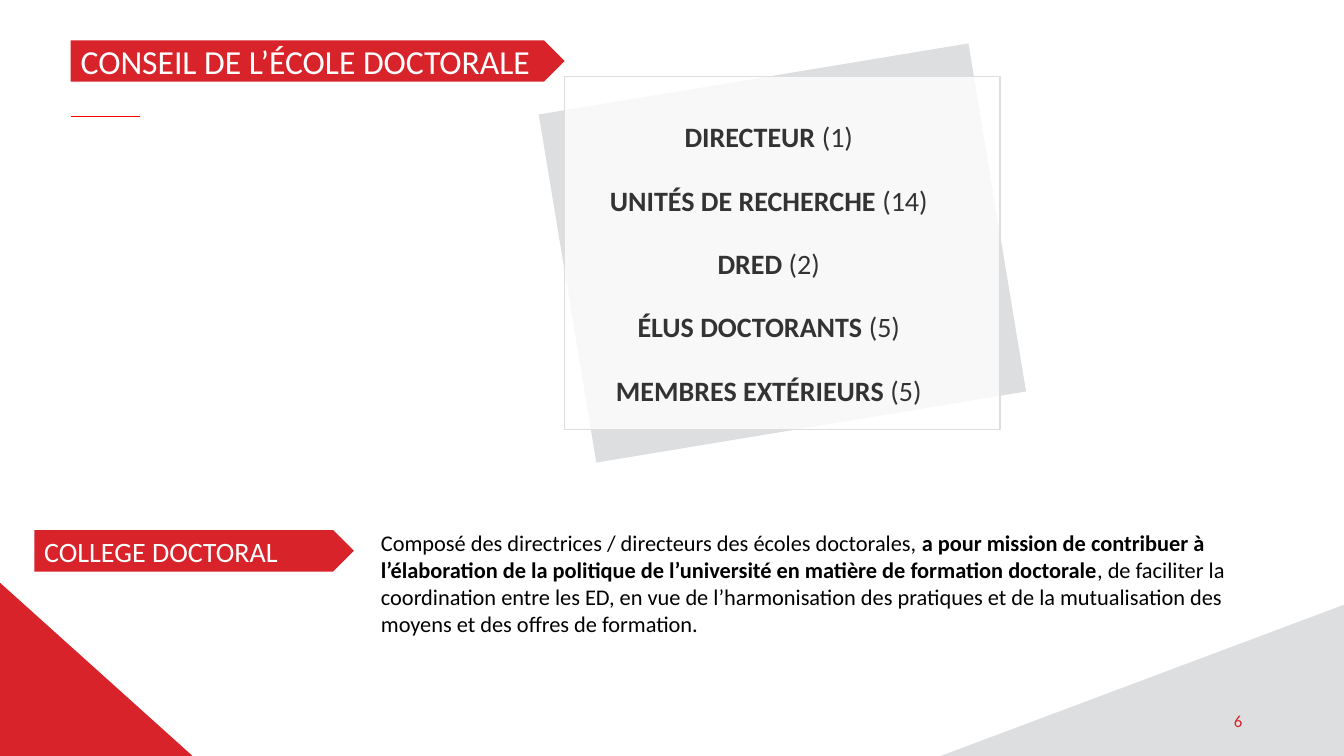
"""Build the slide on the council of the doctoral school and the doctoral college."""
from dataclasses import dataclass
from typing import Optional

import lxml.etree
import pptx
import pptx.dml.color
import pptx.enum.shapes
import pptx.enum.text
import pptx.oxml.ns
import pptx.util

Inches = pptx.util.Inches
Pt = pptx.util.Pt
Preset = pptx.enum.shapes.MSO_SHAPE
Align = pptx.enum.text.PP_ALIGN
Anchor = pptx.enum.text.MSO_ANCHOR
qn = pptx.oxml.ns.qn

RED, GREY, WHITE, DARK, BLACK = "D8232A", "DCDEE0", "FFFFFF", "333333", "000000"
RULE_RED = "FF0000"


@dataclass(frozen=True)
class Box:
    left: float
    top: float
    width: float
    height: float

    def lengths(self) -> tuple:
        return tuple(Inches(n) for n in (self.left, self.top, self.width, self.height))


@dataclass(frozen=True)
class Panel:
    preset: int
    box: Box
    fill: str
    line: Optional[str] = None
    rotation: float = 0
    opacity: int = 100
    flipped: bool = False


@dataclass(frozen=True)
class Run:
    text: str
    bold: bool = False


TITLE_BOX = Box(0.7, 0.4, 4.9, 0.41)
COLLEGE_BOX = Box(0.34, 5.26, 3.17, 0.41)
CARD_BOX = Box(5.6, 0.76, 4.32, 3.5)
MEMBERS_BOX = Box(5.61, 1.14, 4.03, 3)
MISSION_BOX = Box(3.68, 5.2, 9.22, 1.18)
NUMBER_BOX = Box(9.42, 6.95, 3, 0.4)

PANELS = (
    Panel(Preset.RIGHT_TRIANGLE, Box(0, 5.79, 1.9, 1.71), RED, line=RED),
    Panel(Preset.RIGHT_TRIANGLE, Box(9.33, 6, 4, 1.5), GREY, flipped=True),
    Panel(Preset.RECTANGLE, CARD_BOX, GREY, rotation=350.6),
    Panel(Preset.RECTANGLE, CARD_BOX, WHITE, line=GREY, opacity=80),
    Panel(Preset.PENTAGON, TITLE_BOX, RED),
)
COLLEGE_PANEL = Panel(Preset.PENTAGON, COLLEGE_BOX, RED)

MEMBERS = (
    ("DIRECTEUR", 1),
    ("UNITÉS DE RECHERCHE", 14),
    ("DRED", 2),
    ("ÉLUS DOCTORANTS", 5),
    ("MEMBRES EXTÉRIEURS", 5),
)

MISSION = (
    Run("Composé des directrices / directeurs des écoles doctorales,"),
    Run(" a pour mission de contribuer à l’élaboration de la politique de l’université"
        " en matière de formation doctorale", bold=True),
    Run(", de faciliter la coordination entre les ED, en vue de l’harmonisation des pratiques"
        " et de la mutualisation des moyens et des offres de formation."),
)


def color(value: str) -> pptx.dml.color.RGBColor:
    return pptx.dml.color.RGBColor.from_string(value)


def add_panel(slide, panel: Panel):
    shape = slide.shapes.add_shape(panel.preset, *panel.box.lengths())
    shape.shadow.inherit = False
    shape.rotation = panel.rotation
    shape.fill.solid()
    shape.fill.fore_color.rgb = color(panel.fill)
    if panel.line:
        shape.line.color.rgb = color(panel.line)
        shape.line.width = Pt(1)
    else:
        shape.line.fill.background()
    properties = shape.element.spPr
    if panel.opacity < 100:
        fill_color = properties.find(qn("a:solidFill"))[0]
        alpha = lxml.etree.SubElement(fill_color, qn("a:alpha"))
        alpha.set("val", str(panel.opacity * 1000))
    if panel.flipped:
        properties.find(qn("a:xfrm")).set("flipH", "1")
    return shape


def add_rule(slide, left: float, right: float, top: float) -> None:
    rule = slide.shapes.add_connector(
        pptx.enum.shapes.MSO_CONNECTOR.STRAIGHT,
        Inches(left), Inches(top), Inches(right), Inches(top))
    rule.line.color.rgb = color(RULE_RED)
    rule.line.width = Pt(0.5)
    lxml.etree.SubElement(rule.element.spPr, qn("a:effectLst"))


def write(paragraph, runs: tuple[Run, ...], size: int, ink: str, align=Align.LEFT) -> None:
    paragraph.alignment = align
    paragraph.font.name = "Calibri"
    paragraph.font.size = Pt(size)
    paragraph.font.color.rgb = color(ink)
    for part in runs:
        run = paragraph.add_run()
        run.text = part.text
        run.font.bold = part.bold


def prepare_frame(shape, anchor=Anchor.TOP):
    frame = shape.text_frame
    frame.word_wrap = True
    frame.auto_size = pptx.enum.text.MSO_AUTO_SIZE.NONE
    frame.vertical_anchor = anchor
    return frame


def place_in_front(slide, placeholder, box: Box) -> None:
    placeholder.left, placeholder.top, placeholder.width, placeholder.height = box.lengths()
    slide.shapes.element.append(placeholder.element)


def fill_members(placeholder) -> None:
    frame = prepare_frame(placeholder)
    for index, (role, count) in enumerate(MEMBERS):
        paragraph = frame.add_paragraph() if index else frame.paragraphs[0]
        write(paragraph, (Run(f"{role} ", bold=True), Run(f"({count})")), 20, DARK, Align.CENTER)
        paragraph.space_before = Pt(0)
        paragraph.space_after = Pt(21.2)
        properties = paragraph._p.get_or_add_pPr()
        properties.set("marL", "0")
        properties.set("indent", "0")
        properties.insert_element_before(
            lxml.etree.Element(qn("a:buNone")), "a:tabLst", "a:defRPr", "a:extLst")


def add_text(slide, box: Box, runs: tuple[Run, ...], size: int, ink: str,
             align=Align.LEFT, anchor=Anchor.TOP) -> None:
    frame = prepare_frame(slide.shapes.add_textbox(*box.lengths()), anchor)
    write(frame.paragraphs[0], runs, size, ink, align)


def main() -> None:
    presentation = pptx.Presentation()
    presentation.slide_width = Inches(13.33)
    presentation.slide_height = Inches(7.5)
    slide = presentation.slides.add_slide(presentation.slide_layouts[1])

    for panel in PANELS:
        add_panel(slide, panel)
    add_rule(slide, 0.7, 1.39, 1.15)

    title, members = slide.shapes.title, slide.placeholders[1]
    place_in_front(slide, title, TITLE_BOX)
    title_frame = prepare_frame(title, Anchor.MIDDLE)
    write(title_frame.paragraphs[0], (Run("CONSEIL DE L’ÉCOLE DOCTORALE"),), 24, WHITE)
    place_in_front(slide, members, MEMBERS_BOX)
    fill_members(members)

    college = prepare_frame(add_panel(slide, COLLEGE_PANEL), Anchor.MIDDLE)
    write(college.paragraphs[0], (Run("COLLEGE DOCTORAL"),), 20, WHITE)
    add_text(slide, MISSION_BOX, MISSION, 16, BLACK)
    add_text(slide, NUMBER_BOX, (Run("6"),), 12, RED, Align.RIGHT, Anchor.MIDDLE)
    presentation.save("out.pptx")


if __name__ == "__main__":
    main()
